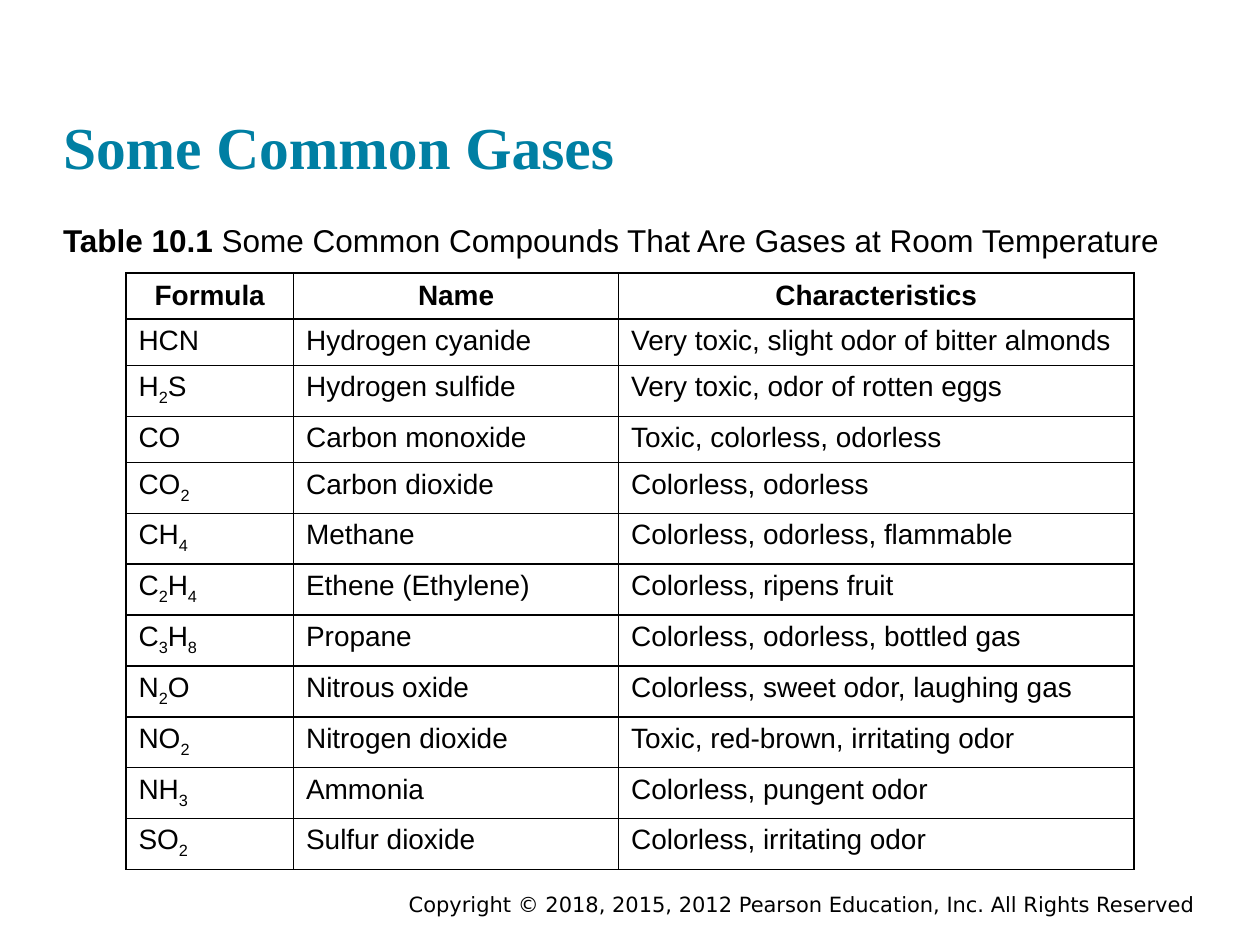
from itertools import groupby

from lxml import etree
from pptx import Presentation
from pptx.dml.color import RGBColor
from pptx.enum.text import MSO_ANCHOR, MSO_AUTO_SIZE, PP_ALIGN
from pptx.oxml.ns import qn
from pptx.util import Pt

LEFT, CENTER, RIGHT = PP_ALIGN.LEFT, PP_ALIGN.CENTER, PP_ALIGN.RIGHT
TOP, MIDDLE, BOTTOM = MSO_ANCHOR.TOP, MSO_ANCHOR.MIDDLE, MSO_ANCHOR.BOTTOM
NO_AUTOFIT = MSO_AUTO_SIZE.NONE

COLORS = {"title": "007FA3", "text": "000000", "border": "000000"}
COLUMN_SHARES = (1.33, 2.58, 4.09)
PLAIN_ROW, SUBSCRIPT_ROW = 25.1, 27.6
HEADINGS = ("Formula", "Name", "Characteristics")
GASES = [
    ("HCN", "Hydrogen cyanide", "Very toxic, slight odor of bitter almonds"),
    ("H2S", "Hydrogen sulfide", "Very toxic, odor of rotten eggs"),
    ("CO", "Carbon monoxide", "Toxic, colorless, odorless"),
    ("CO2", "Carbon dioxide", "Colorless, odorless"),
    ("CH4", "Methane", "Colorless, odorless, flammable"),
    ("C2H4", "Ethene (Ethylene)", "Colorless, ripens fruit"),
    ("C3H8", "Propane", "Colorless, odorless, bottled gas"),
    ("N2O", "Nitrous oxide", "Colorless, sweet odor, laughing gas"),
    ("NO2", "Nitrogen dioxide", "Toxic, red-brown, irritating odor"),
    ("NH3", "Ammonia", "Colorless, pungent odor"),
    ("SO2", "Sulfur dioxide", "Colorless, irritating odor"),
]


def place(shape, box):
    """Move a shape to a box of left, top, width and height in points."""
    shape.left, shape.top, shape.width, shape.height = map(Pt, box)


def style_font(font, name, size, color="text", bold=None):
    """Set the face, size, colour and weight of a font."""
    font.name, font.size, font.bold = name, Pt(size), bold
    font.color.rgb = RGBColor.from_string(COLORS[color])


def prepare_placeholder(shape, box, anchor):
    """Place a placeholder without insets and return its first paragraph."""
    place(shape, box)
    frame = shape.text_frame
    frame.margin_left = frame.margin_top = frame.margin_right = frame.margin_bottom = 0
    frame.word_wrap, frame.auto_size = True, NO_AUTOFIT
    frame.vertical_anchor = anchor
    para = frame.paragraphs[0]
    para.alignment, para.space_before = LEFT, Pt(0)
    return para


def add_title(page, box):
    """Fill the title placeholder."""
    para = prepare_placeholder(page.shapes.title, box, BOTTOM)
    para.text = "Some Common Gases"
    style_font(para.font, "Times New Roman", 34, "title", True)


def add_caption(page, box):
    """Fill the body placeholder with the table caption."""
    para = prepare_placeholder(page.placeholders[1], box, TOP)
    properties = para._p.get_or_add_pPr()
    properties.set("marL", "0")
    properties.set("indent", "0")
    etree.SubElement(properties, qn("a:buNone"))
    style_font(para.font, "Arial", 18)
    label = para.add_run()
    label.text = "Table 10.1 "
    label.font.bold = True
    para.add_run().text = "Some Common Compounds That Are Gases at Room Temperature"


def add_borders(cell):
    """Draw a one-point line on each side of a cell."""
    properties = cell._tc.get_or_add_tcPr()
    for side in ("a:lnL", "a:lnR", "a:lnT", "a:lnB"):
        line = etree.SubElement(properties, qn(side), w=str(Pt(1)))
        fill = etree.SubElement(line, qn("a:solidFill"))
        etree.SubElement(fill, qn("a:srgbClr"), val=COLORS["border"])


def add_formula(para, formula):
    """Write a chemical formula with its digits as subscripts."""
    for is_digit, letters in groupby(formula, str.isdigit):
        span = para.add_run()
        span.text = "".join(letters)
        if is_digit:
            span._r.get_or_add_rPr().set("baseline", "-25000")


def add_gas_table(page, box):
    """Build the table of gases in the given box."""
    rows = [HEADINGS, *GASES]
    table = page.shapes.add_table(len(rows), len(HEADINGS), *map(Pt, box)).table
    table.first_row = table.horz_banding = False
    for column, share in zip(table.columns, COLUMN_SHARES):
        column.width = Pt(box[2] * share / sum(COLUMN_SHARES))
    for row_index, values in enumerate(rows):
        heading = row_index == 0
        has_subscript = any(letter.isdigit() for letter in values[0])
        table.rows[row_index].height = Pt(SUBSCRIPT_ROW if has_subscript else PLAIN_ROW)
        for column_index, value in enumerate(values):
            cell = table.cell(row_index, column_index)
            add_borders(cell)
            cell.fill.background()
            cell.vertical_anchor = MIDDLE if heading else TOP
            para = cell.text_frame.paragraphs[0]
            para.alignment = CENTER if heading else LEFT
            style_font(para.font, "Arial", 16, bold=heading)
            if column_index == 0:
                add_formula(para, value)
            else:
                para.add_run().text = value


def add_copyright(page, box):
    """Add the right-aligned copyright line."""
    frame = page.shapes.add_textbox(*map(Pt, box)).text_frame
    frame.word_wrap = True
    para = frame.paragraphs[0]
    para.text = "Copyright © 2018, 2015, 2012 Pearson Education, Inc. All Rights Reserved"
    para.alignment = RIGHT
    style_font(para.font, "DejaVu Sans", 12)


def main():
    """Build and save the slide."""
    deck = Presentation()
    deck.slide_width, deck.slide_height = Pt(720), Pt(540)
    page = deck.slides.add_slide(deck.slide_layouts[1])
    add_copyright(page, (126, 506, 564, 22))
    add_title(page, (36, 17.5, 648, 86))
    add_caption(page, (36, 126, 648, 24))
    add_gas_table(page, (72, 156, 576, 324))
    deck.save("out.pptx")


if __name__ == "__main__":
    main()
